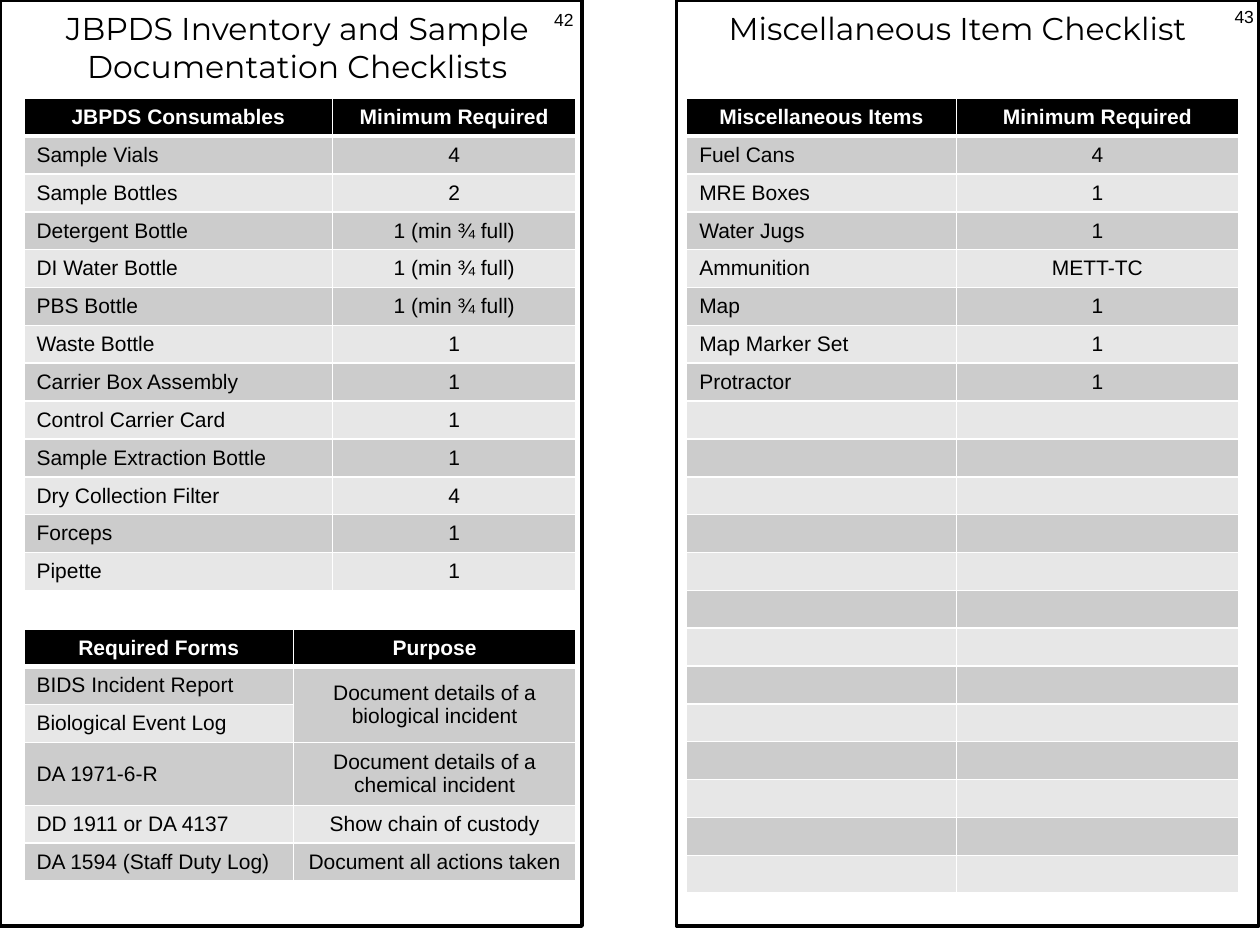
from lxml import etree
from pptx import Presentation
from pptx.dml.color import RGBColor
from pptx.enum import shapes, text
from pptx.oxml import ns
from pptx.util import Inches, Pt

COLORS = {"black": "000000", "white": "FFFFFF", "dark": "CCCCCC", "light": "E7E7E7"}
ROW_HEIGHT = 0.3
LEFT_MARGIN = 0.19
TABLE_TOP = 0.78
FORM_COLUMNS = (2.14, 2.24)

consumables = [
    ("JBPDS Consumables", "Minimum Required"),
    ("Sample Vials", "4"),
    ("Sample Bottles", "2"),
    ("Detergent Bottle", "1 (min ¾ full)"),
    ("DI Water Bottle", "1 (min ¾ full)"),
    ("PBS Bottle", "1 (min ¾ full)"),
    ("Waste Bottle", "1"),
    ("Carrier Box Assembly", "1"),
    ("Control Carrier Card", "1"),
    ("Sample Extraction Bottle", "1"),
    ("Dry Collection Filter", "4"),
    ("Forceps", "1"),
    ("Pipette", "1"),
]
forms = [
    ("Required Forms", "Purpose"),
    ("BIDS Incident Report", "Document details of a biological incident"),
    ("Biological Event Log", ""),
    ("DA 1971-6-R", "Document details of a chemical incident"),
    ("DD 1911 or DA 4137", "Show chain of custody"),
    ("DA 1594 (Staff Duty Log)", "Document all actions taken"),
]
miscellaneous = [
    ("Miscellaneous Items", "Minimum Required"),
    ("Fuel Cans", "4"),
    ("MRE Boxes", "1"),
    ("Water Jugs", "1"),
    ("Ammunition", "METT-TC"),
    ("Map", "1"),
    ("Map Marker Set", "1"),
    ("Protractor", "1"),
] + [("", "")] * 13


def write(text_frame, words, font_name, size, color="black", bold=False, align=text.PP_ALIGN.LEFT):
    text_frame.text = words
    paragraph = text_frame.paragraphs[0]
    paragraph.alignment = align
    for run in paragraph.runs:
        run.font.name = font_name
        run.font.size = Pt(size)
        run.font.bold = bold
        run.font.color.rgb = RGBColor.from_string(COLORS[color])


def format_cell(cell, row_index, column_index, words):
    """Set the borders, banded fill and text of one table cell."""
    header = row_index == 0
    properties = cell._tc.get_or_add_tcPr()
    widths = {"lnL": 1, "lnR": 1, "lnT": 3 if row_index == 1 else 1, "lnB": 3 if header else 1}
    for side, width in widths.items():
        line = etree.SubElement(properties, ns.qn(f"a:{side}"), w=str(Pt(width)))
        fill = etree.SubElement(line, ns.qn("a:solidFill"))
        etree.SubElement(fill, ns.qn("a:srgbClr"), val=COLORS["white"])
    band = "black" if header else "dark" if row_index % 2 else "light"
    cell.fill.solid()
    cell.fill.fore_color.rgb = RGBColor.from_string(COLORS[band])
    cell.vertical_anchor = text.MSO_ANCHOR.MIDDLE
    centered = header or column_index == 1
    write(cell.text_frame, words, "Arial", 12, "white" if header else "black", header,
          text.PP_ALIGN.CENTER if centered else text.PP_ALIGN.LEFT)
    if not words:
        # An empty cell needs its own text size to keep the row height
        etree.SubElement(cell.text_frame.paragraphs[0]._p, ns.qn("a:endParaRPr"), sz="1200")


presentation = Presentation()
presentation.slide_width = Inches(10)
presentation.slide_height = Inches(7.5)
slide = presentation.slides.add_slide(presentation.slide_layouts[5])

# Page frames
for left in (5.37, 0):
    frame = slide.shapes.add_shape(shapes.MSO_SHAPE.RECTANGLE, Inches(left), 0, Inches(4.62), Inches(7.35))
    frame.shadow.inherit = False
    frame.fill.background()
    frame.line.color.rgb = RGBColor.from_string(COLORS["black"])
    frame.line.width = Pt(2)

# Page titles
left_title = slide.shapes.title
left_title.left, left_title.top = Inches(-0.01), Inches(0.02)
left_title.width, left_title.height = Inches(4.74), Inches(0.71)
right_title = slide.shapes.add_textbox(Inches(5.23), Inches(0.02), Inches(4.74), Inches(0.4))
for title, words in (
    (left_title, "JBPDS Inventory and Sample Documentation Checklists"),
    (right_title, "Miscellaneous Item Checklist"),
):
    title.text_frame.word_wrap = True
    title.text_frame.auto_size = text.MSO_AUTO_SIZE.SHAPE_TO_FIT_TEXT
    title.text_frame.vertical_anchor = text.MSO_ANCHOR.TOP
    write(title.text_frame, words, "Montserrat", 18, align=text.PP_ALIGN.CENTER)

# Page numbers
for number, left, top in (("43", 9.7, 0), ("42", 4.3, 0.02)):
    page_number = slide.shapes.add_textbox(Inches(left), Inches(top), Inches(0.36), Inches(0.27))
    page_number.text_frame.word_wrap = False
    page_number.text_frame.auto_size = text.MSO_AUTO_SIZE.SHAPE_TO_FIT_TEXT
    write(page_number.text_frame, number, "Arial", 10)

# Checklists
tables = []
for rows, left, top, column_widths in (
    (forms, LEFT_MARGIN, 4.99, FORM_COLUMNS),
    (consumables, LEFT_MARGIN, TABLE_TOP, (2.45, 1.93)),
    (miscellaneous, 5.45, TABLE_TOP, FORM_COLUMNS),
):
    table = slide.shapes.add_table(
        len(rows), 2, Inches(left), Inches(top), Inches(sum(column_widths)), Inches(ROW_HEIGHT * len(rows))
    ).table
    for column, width in zip(table.columns, column_widths):
        column.width = Inches(width)
    for row_index, row in enumerate(rows):
        table.rows[row_index].height = Inches(ROW_HEIGHT)
        for column_index, words in enumerate(row):
            format_cell(table.cell(row_index, column_index), row_index, column_index, words)
    tables.append(table)

# Both incident forms share one purpose; the chemical one takes two lines
forms_table = tables[0]
forms_table.cell(1, 1).merge(forms_table.cell(2, 1))
forms_table.rows[3].height = Inches(0.5)

presentation.save("out.pptx")
